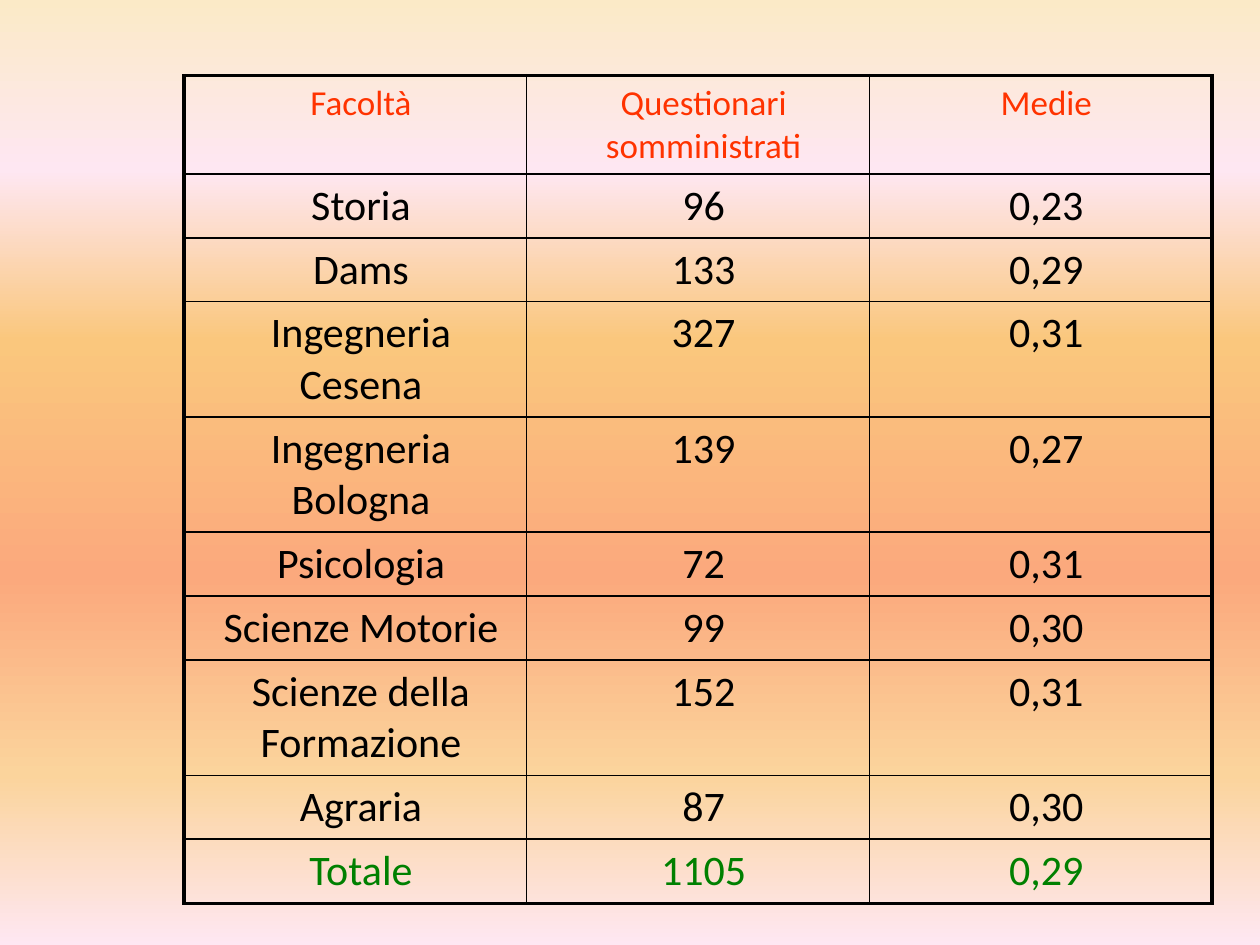
import lxml.etree
import pptx
import pptx.dml.color
import pptx.enum.text
import pptx.oxml.ns
import pptx.util
from pptx.util import Inches

FONT = "Calibri"
BLACK, RED, GREEN = "000000", "FF3300", "008000"
THIN, THICK = 1, 2.25

BACKGROUND_STOPS = [
    (0, "FBEAC7"), (18, "FEE7F2"), (36, "FAC77D"),
    (61, "FBA97D"), (82, "FBD49C"), (100, "FEE7F2"),
]

HEADER = ("Facoltà", "Questionari somministrati", "Medie")
FACULTIES = [
    ("Storia", "96", "0,23"),
    ("Dams", "133", "0,29"),
    ("Ingegneria Cesena", "327", "0,31"),
    ("Ingegneria Bologna", "139", "0,27"),
    ("Psicologia", "72", "0,31"),
    ("Scienze Motorie", "99", "0,30"),
    ("Scienze della Formazione", "152", "0,31"),
    ("Agraria", "87", "0,30"),
]
TOTAL = ("Totale", "1105", "0,29")
ROW_HEIGHTS = [0.77, 0.5, 0.5, 0.9, 0.9, 0.5, 0.51, 0.9, 0.5, 0.51]


def color(hex_string):
    return pptx.dml.color.RGBColor.from_string(hex_string)


def add_element(parent, tag, **attributes):
    element = lxml.etree.SubElement(parent, pptx.oxml.ns.qn(tag))
    for name, value in attributes.items():
        element.set(name, str(value))
    return element


def fill_background(slide, stops):
    fill = slide.background.fill
    fill.gradient()
    fill.gradient_angle = 270
    stop_list = next(slide.element.iter(pptx.oxml.ns.qn("a:gsLst")))
    for old_stop in list(stop_list):
        stop_list.remove(old_stop)
    for percent, hex_string in stops:
        stop = add_element(stop_list, "a:gs", pos=percent * 1000)
        add_element(stop, "a:srgbClr", val=hex_string)


def set_borders(cell, **widths):
    """Draw black borders; widths are in points, keyed L, R, T, B in that order."""
    properties = cell._tc.get_or_add_tcPr()
    for side, width in widths.items():
        line = add_element(properties, f"a:ln{side}", w=int(pptx.util.Pt(width)))
        add_element(add_element(line, "a:solidFill"), "a:srgbClr", val=BLACK)


def write_text(cell, text, size=24, text_color=BLACK):
    paragraph = cell.text_frame.paragraphs[0]
    paragraph.alignment = pptx.enum.text.PP_ALIGN.CENTER
    paragraph.space_before = pptx.util.Pt(6)
    properties = paragraph._p.get_or_add_pPr()
    properties.set("marL", str(Inches(0.09)))
    properties.set("indent", "0")
    run = paragraph.add_run()
    run.text = text
    run.font.name = FONT
    run.font.size = pptx.util.Pt(size)
    run.font.color.rgb = color(text_color)


def add_faculty_table(slide, left, top, width, height):
    rows = [HEADER, *FACULTIES, TOTAL]
    formats = [{"size": 20, "text_color": RED}]
    formats += [{}] * len(FACULTIES) + [{"text_color": GREEN}]
    last_row, last_column = len(rows) - 1, len(HEADER) - 1

    table = slide.shapes.add_table(
        len(rows), len(HEADER), left, top, width, height).table
    table.first_row = False
    table.horz_banding = False
    for column in table.columns:
        column.width = width // len(HEADER)

    for r, (texts, text_format) in enumerate(zip(rows, formats)):
        table.rows[r].height = Inches(ROW_HEIGHTS[r])
        for c, text in enumerate(texts):
            cell = table.cell(r, c)
            write_text(cell, text, **text_format)
            set_borders(
                cell,
                L=THICK if c == 0 else THIN,
                R=THICK if c == last_column else THIN,
                T=THICK if r == 0 else THIN,
                B=THICK if r == last_row else THIN,
            )
            cell.fill.background()


def main():
    presentation = pptx.Presentation()
    presentation.slide_width = Inches(10)
    presentation.slide_height = Inches(7.5)
    slide = presentation.slides.add_slide(presentation.slide_layouts[6])
    fill_background(slide, BACKGROUND_STOPS)
    add_faculty_table(slide, Inches(1.46), Inches(0.6), Inches(8.16), Inches(6.48))
    presentation.save("out.pptx")


if __name__ == "__main__":
    main()
